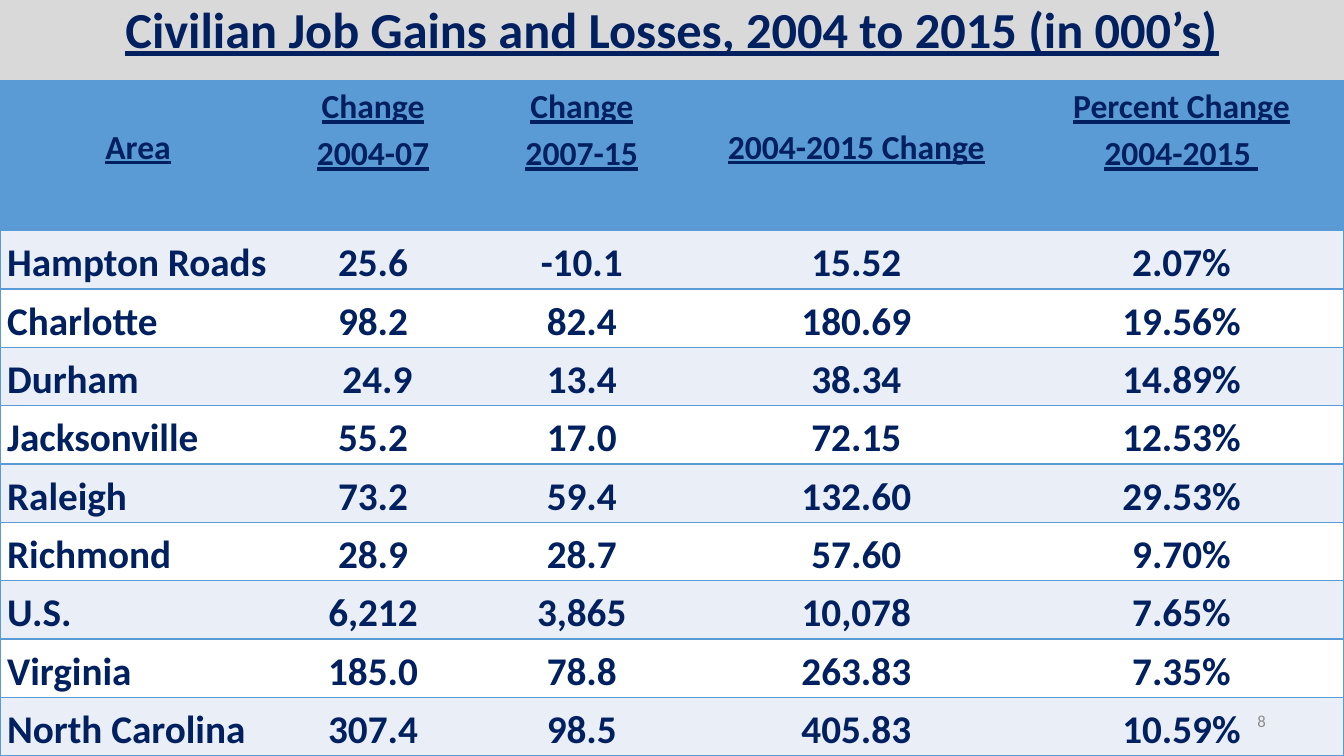
from dataclasses import dataclass

from lxml import etree
from pptx import Presentation
from pptx import util as u
from pptx.dml.color import RGBColor
from pptx.enum import text
from pptx.oxml import ns

NAVY, BLUE, PALE, WHITE = "002060", "5B9BD5", "EAEFF7", "FFFFFF"
GREY, BACKDROP = "8C8C8C", "D9D9D9"
CENTER, LEFT, RIGHT = text.PP_ALIGN.CENTER, text.PP_ALIGN.LEFT, text.PP_ALIGN.RIGHT
TOP, MIDDLE = text.MSO_ANCHOR.TOP, text.MSO_ANCHOR.MIDDLE
PAGE_WIDTH, PAGE_HEIGHT = 33.87, 19.05
TABLE_TOP, HEADER_HEIGHT, ROW_HEIGHT = 2.03, 3.78, 1.47


@dataclass
class Column:
    heading: str
    width: float
    top_margin: float = 0


@dataclass
class Area:
    name: str
    values: tuple[str, ...]


COLUMNS = [
    Column("Area", 6.96, 1.03),
    Column("Change\n2004-07", 4.88),
    Column("Change\n2007-15", 5.64),
    Column("2004-2015 Change", 8.2, 1.03),
    Column("Percent Change\n2004-2015 ", 8.19),
]
AREAS = [
    Area("Hampton Roads", ("25.6", "-10.1", "15.52", "2.07%")),
    Area("Charlotte", ("98.2", "82.4", "180.69", "19.56%")),
    Area("Durham", (" 24.9", "13.4", "38.34", "14.89%")),
    Area("Jacksonville", ("55.2", "17.0", "72.15", "12.53%")),
    Area("Raleigh", ("73.2", "59.4", "132.60", "29.53%")),
    Area("Richmond", ("28.9", "28.7", "57.60", "9.70%")),
    Area("U.S.", ("6,212", "3,865", "10,078", "7.65%")),
    Area("Virginia", ("185.0", "78.8", "263.83", "7.35%")),
    Area("North Carolina", ("307.4", "98.5", "405.83", "10.59%")),
]
HEADING_FONT = {"size": u.Pt(24), "bold": True, "underline": True}
VALUE_FONT = {"size": u.Pt(28), "bold": True, "underline": False}
TITLE_FONT = {"size": u.Pt(36), "bold": True, "underline": True}
NUMBER_FONT = {"size": u.Pt(12), "bold": False}


def color(value: str) -> RGBColor:
    return RGBColor.from_string(value)


def write(frame, words: str, formats: dict, align, spacing: float = 1.0,
          ink: str = NAVY) -> None:
    """Write one paragraph per line of words."""
    for index, line in enumerate(words.split("\n")):
        para = frame.add_paragraph() if index else frame.paragraphs[0]
        para.alignment, para.line_spacing = align, spacing
        para.space_before = u.Pt(0)
        span = para.add_run()
        span.text = line
        span.font.name = "Calibri"
        span.font.color.rgb = color(ink)
        for name, value in formats.items():
            setattr(span.font, name, value)


def set_borders(cell, sides: str) -> None:
    """Rule the listed sides and clear the others."""
    properties = cell._tc.get_or_add_tcPr()
    for index, side in enumerate("LRTB"):
        line = etree.Element(ns.qn(f"a:ln{side}"), w=str(u.Pt(1)))
        if side in sides:
            fill = etree.SubElement(line, ns.qn("a:solidFill"))
            etree.SubElement(fill, ns.qn("a:srgbClr"), val=BLUE)
        else:
            etree.SubElement(line, ns.qn("a:noFill"))
        properties.insert(index, line)


def fill_cell(cell, column: int, words: str, formats: dict, fill: str,
              align, anchor, top_margin: float = 0) -> None:
    cell.fill.solid()
    cell.fill.fore_color.rgb = color(fill)
    margins = {"margin_left": 0.18, "margin_right": 0.18,
               "margin_top": top_margin, "margin_bottom": 0}
    for name, value in margins.items():
        setattr(cell, name, u.Cm(value))
    cell.vertical_anchor = anchor
    write(cell.text_frame, words, formats, align, 1.15)
    edges = {0: "LTB", len(COLUMNS) - 1: "RTB"}
    set_borders(cell, edges.get(column, "TB"))


def add_title(page) -> None:
    box = page.shapes.title
    box.left, box.top = u.Cm(0), u.Cm(0)
    box.width, box.height = u.Cm(PAGE_WIDTH), u.Cm(TABLE_TOP)
    frame = box.text_frame
    frame.auto_size = text.MSO_AUTO_SIZE.NONE
    frame.vertical_anchor = TOP
    write(frame, "Civilian Job Gains and Losses, 2004 to 2015 (in 000’s)",
          TITLE_FONT, CENTER, 0.9)


def add_job_table(page) -> None:
    height = HEADER_HEIGHT + ROW_HEIGHT * len(AREAS)
    table = page.shapes.add_table(
        len(AREAS) + 1, len(COLUMNS), u.Cm(0), u.Cm(TABLE_TOP),
        u.Cm(PAGE_WIDTH), u.Cm(height)).table

    # Header row
    table.rows[0].height = u.Cm(HEADER_HEIGHT)
    for index, column in enumerate(COLUMNS):
        table.columns[index].width = u.Cm(column.width)
        fill_cell(table.cell(0, index), index, column.heading, HEADING_FONT,
                  BLUE, CENTER, TOP, column.top_margin)

    # One banded row per area
    for row, area in enumerate(AREAS, start=1):
        table.rows[row].height = u.Cm(ROW_HEIGHT)
        for index, words in enumerate((area.name, *area.values)):
            fill_cell(table.cell(row, index), index, words, VALUE_FONT,
                      PALE if row % 2 else WHITE,
                      CENTER if index else LEFT, MIDDLE)


def add_page_number(page) -> None:
    # Narrow box in the free space right of the last percentage
    box = page.shapes.add_textbox(u.Cm(31.15), u.Cm(17.65), u.Cm(1), u.Cm(1.02))
    frame = box.text_frame
    frame.word_wrap = True
    frame.vertical_anchor = MIDDLE
    write(frame, "8", NUMBER_FONT, RIGHT, ink=GREY)


def main() -> None:
    deck = Presentation()
    deck.slide_width, deck.slide_height = u.Cm(PAGE_WIDTH), u.Cm(PAGE_HEIGHT)
    page = deck.slides.add_slide(deck.slide_layouts[5])
    page.background.fill.solid()
    page.background.fill.fore_color.rgb = color(BACKDROP)
    add_title(page)
    add_job_table(page)
    add_page_number(page)
    deck.save("out.pptx")


if __name__ == "__main__":
    main()
